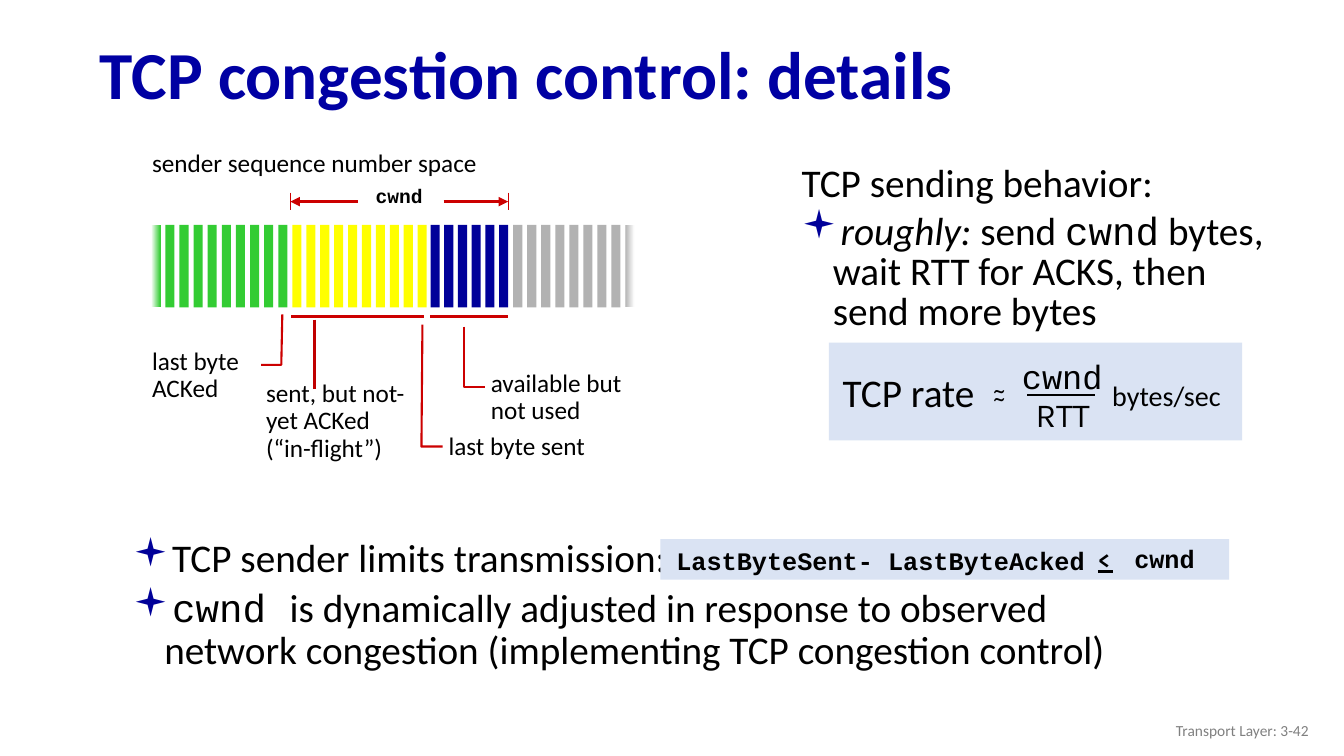
from pptx import Presentation
from pptx.dml.color import RGBColor
from pptx.enum import shapes, text
from pptx.oxml import xmlchemy
from pptx.oxml.ns import qn
from pptx.util import Inches, Pt
from lxml import etree

COLORS = {
    "title": "0000A3", "bullet": "000099", "text": "000000", "footer": "808080",
    "panel": "DAE3F3", "mark": "CC0000", "pointer": "C00000", "white": "FFFFFF",
    "acked": "33CC33", "in_flight": "FFFF00", "usable": "000099", "unusable": "B2B2B2",
}
BODY, CODE, SYMBOL = "Calibri", "Courier New", "Karla"
LEFT, CENTER, RIGHT = text.PP_ALIGN.LEFT, text.PP_ALIGN.CENTER, text.PP_ALIGN.RIGHT

# colour, left of the first byte, number of bytes, distance between bytes
SEGMENTS = [("acked", 1.5, 10, 0.14), ("in_flight", 2.9, 10, 0.138),
            ("usable", 4.27, 6, 0.136), ("unusable", 5.09, 9, 0.139)]
BYTE_TOP, BYTE_WIDTH, BYTE_HEIGHT = 2.23, 0.09, 0.82


def color(name):
    return RGBColor.from_string(COLORS[name])


def style(font, size, face=BODY, ink="text", bold=False):
    font.size, font.name, font.bold = Pt(size), face, bold
    font.color.rgb = color(ink)


def place(shape, left, top, width, height):
    shape.left, shape.top = Inches(left), Inches(top)
    shape.width, shape.height = Inches(width), Inches(height)


def add_label(slide, box, lines, size, face=BODY, bold=False, ink="text",
              align=LEFT, spacing=1.0):
    label = slide.shapes.add_textbox(*map(Inches, box))
    frame = label.text_frame
    frame.word_wrap = align != CENTER
    frame.text = lines
    for paragraph in frame.paragraphs:
        paragraph.alignment, paragraph.line_spacing = align, spacing
        style(paragraph.font, size, face, ink, bold)
    return label


def add_box(slide, box, fill):
    rect = slide.shapes.add_shape(shapes.MSO_SHAPE.RECTANGLE, *map(Inches, box))
    rect.shadow.inherit = False
    rect.line.fill.background()
    rect.fill.solid()
    rect.fill.fore_color.rgb = color(fill)
    return rect


def fade(rect, start, end):
    rect.fill.gradient()
    rect.fill.gradient_angle = 0
    for stop, name in zip(rect.fill.gradient_stops, (start, end)):
        stop.color.rgb = color(name)


def add_line(slide, x1, y1, x2, y2, width, ink="mark", arrow=False):
    line = slide.shapes.add_connector(
        shapes.MSO_CONNECTOR.STRAIGHT, *map(Inches, (x1, y1, x2, y2)))
    line.line.color.rgb, line.line.width = color(ink), Pt(width)
    if arrow:
        etree.SubElement(line.line._get_or_add_ln(), qn("a:tailEnd"), type="triangle")
    etree.SubElement(line._element.spPr, qn("a:effectLst"))


def add_leader(slide, *points):
    """Draw a bent, open line through the points."""
    start, *rest = [(Inches(x), Inches(y)) for x, y in points]
    builder = slide.shapes.build_freeform(*start)
    builder.add_line_segments(rest, close=False)
    leader = builder.convert_to_shape()
    leader.shadow.inherit = False
    leader.fill.background()
    leader.line.color.rgb, leader.line.width = color("mark"), Pt(1.5)


def set_bullet(paragraph, bulleted):
    props = paragraph._p.get_or_add_pPr()
    props.set("marL", str(Inches(0.31)))
    props.set("indent", str(-Inches(0.31)))
    if not bulleted:
        etree.SubElement(props, qn("a:buNone"))
        return
    bullet_color = etree.SubElement(props, qn("a:buClr"))
    etree.SubElement(bullet_color, qn("a:srgbClr"), val=COLORS["bullet"])
    etree.SubElement(props, qn("a:buFont"), typeface="Wingdings")
    etree.SubElement(props, qn("a:buChar"), char="▪")


def fill_list(body, box, items, spacing):
    """Fill a body placeholder; an item is (bulleted, [(words, face, italic)])."""
    place(body, *box)
    frame = body.text_frame
    frame.auto_size = text.MSO_AUTO_SIZE.NONE
    for number, (bulleted, runs) in enumerate(items):
        paragraph = frame.add_paragraph() if number else frame.paragraphs[0]
        paragraph.line_spacing, paragraph.space_before = spacing, Pt(5.6)
        set_bullet(paragraph, bulleted)
        for words, face, italic in runs:
            run = paragraph.add_run()
            run.text = words
            style(run.font, 28, face)
            run.font.italic = italic


def add_title(slide):
    title = slide.shapes.title
    place(title, 0.89, 0.28, 12.46, 0.98)
    title.text_frame.text = "TCP congestion control: details"
    title.text_frame.vertical_anchor = text.MSO_ANCHOR.MIDDLE
    heading = title.text_frame.paragraphs[0]
    heading.alignment, heading.line_spacing = LEFT, 0.9
    style(heading.font, 48, ink="title", bold=True)


def add_sequence_space(slide):
    for name, left, count, pitch in SEGMENTS:
        cells = [add_box(slide, (left + i * pitch, BYTE_TOP, BYTE_WIDTH, BYTE_HEIGHT), name)
                 for i in range(count)]
        if name == "acked":
            fade(cells[0], "white", name)
        elif name == "unusable":
            fade(cells[-1], name, "white")
    add_label(slide, (1.41, 1.41, 3.52, 0.4), "sender sequence number space", 18)
    add_label(slide, (3.52, 1.8, 0.88, 0.38), "cwnd", 14, CODE, True, align=CENTER, spacing=0.9)
    for inner, outer in ((3.55, 2.88), (4.4, 5.04)):
        add_line(slide, inner, 2, outer, 2, 2.25, arrow=True)
        add_line(slide, outer, 1.91, outer, 2.08, 0.75)


def add_callouts(slide):
    add_line(slide, 2.89, 3.14, 4.21, 3.14, 2.25)
    add_line(slide, 4.27, 3.14, 5.04, 3.14, 2.25)
    add_leader(slide, (2.8, 3.12), (2.79, 3.62), (2.59, 3.62))
    add_leader(slide, (4.19, 3.22), (4.18, 4.43), (4.39, 4.43))
    add_leader(slide, (4.6, 3.24), (4.6, 3.84), (4.81, 3.84))
    add_line(slide, 3.12, 3.17, 3.12, 3.86, 1.5, "pointer")
    for box, words in (
            ((1.41, 3.41, 1.08, 0.65), "last byte\nACKed"),
            ((2.54, 3.73, 1.82, 0.92), "sent, but not-yet ACKed\n(“in-flight”)"),
            ((4.35, 4.25, 1.75, 0.37), "last byte sent"),
            ((4.77, 3.63, 1.75, 0.65), "available but not used")):
        add_label(slide, box, words, 18, spacing=0.9)


def add_rate_formula(slide):
    add_box(slide, (8.22, 3.4, 4.1, 0.97), "panel")
    for box, words, size, face in (
            ((8.25, 3.6, 1.52, 0.57), "TCP rate", 28, BODY),
            ((9.4, 3.66, 1.02, 0.4), "~", 18, SYMBOL),
            ((9.4, 3.74, 1.02, 0.4), "~", 18, SYMBOL),
            ((10.03, 3.48, 1.01, 0.51), "cwnd", 24, CODE),
            ((10.14, 3.86, 0.8, 0.51), "RTT", 24, SYMBOL),
            ((10.92, 3.71, 1.3, 0.44), "bytes/sec", 20, BODY)):
        add_label(slide, box, words, size, face, align=CENTER)
    add_line(slide, 10.19, 3.92, 10.86, 3.92, 1.5, "text")


def add_window_limit(slide):
    add_box(slide, (6.55, 5.35, 5.64, 0.4), "panel")
    add_label(slide, (6.61, 5.41, 4.81, 0.37), "LastByteSent- LastByteAcked",
              18, CODE, True, spacing=0.85)
    add_label(slide, (10.76, 5.37, 0.38, 0.37), "<", 16, SYMBOL, True, align=CENTER)
    add_line(slide, 10.89, 5.67, 11.04, 5.67, 1.5, "text")
    add_label(slide, (11.15, 5.34, 0.8, 0.4), "cwnd", 18, CODE, True, align=CENTER)


def main():
    deck = Presentation()
    deck.slide_width, deck.slide_height = Inches(13.33), Inches(7.5)
    slide = deck.slides.add_slide(deck.slide_layouts.get_by_name("Two Content"))
    add_title(slide)
    fill_list(slide.placeholders[1], (7.85, 1.59, 5.02, 2.68), [
        (False, [("TCP sending behavior:", BODY, False)]),
        (True, [("roughly:", BODY, True), (" send ", BODY, False), ("cwnd", CODE, False),
                (" bytes, wait RTT for ACKS, then send more bytes", BODY, False)]),
    ], 0.85)
    fill_list(slide.placeholders[2], (1.22, 5.29, 10.53, 1.85), [
        (True, [("TCP sender limits transmission:", BODY, False)]),
        (True, [("cwnd ", CODE, False),
                ("is dynamically adjusted in response to observed network congestion "
                 "(implementing TCP congestion control)", BODY, False)]),
    ], 0.9)
    add_sequence_space(slide)
    add_callouts(slide)
    add_rate_formula(slide)
    add_window_limit(slide)
    footer = add_label(slide, (10.08, 7.05, 3, 0.4), "Transport Layer: 3-42", 11,
                       ink="footer", align=RIGHT)
    footer.text_frame.vertical_anchor = text.MSO_ANCHOR.MIDDLE
    deck.save("out.pptx")


if __name__ == "__main__":
    main()
